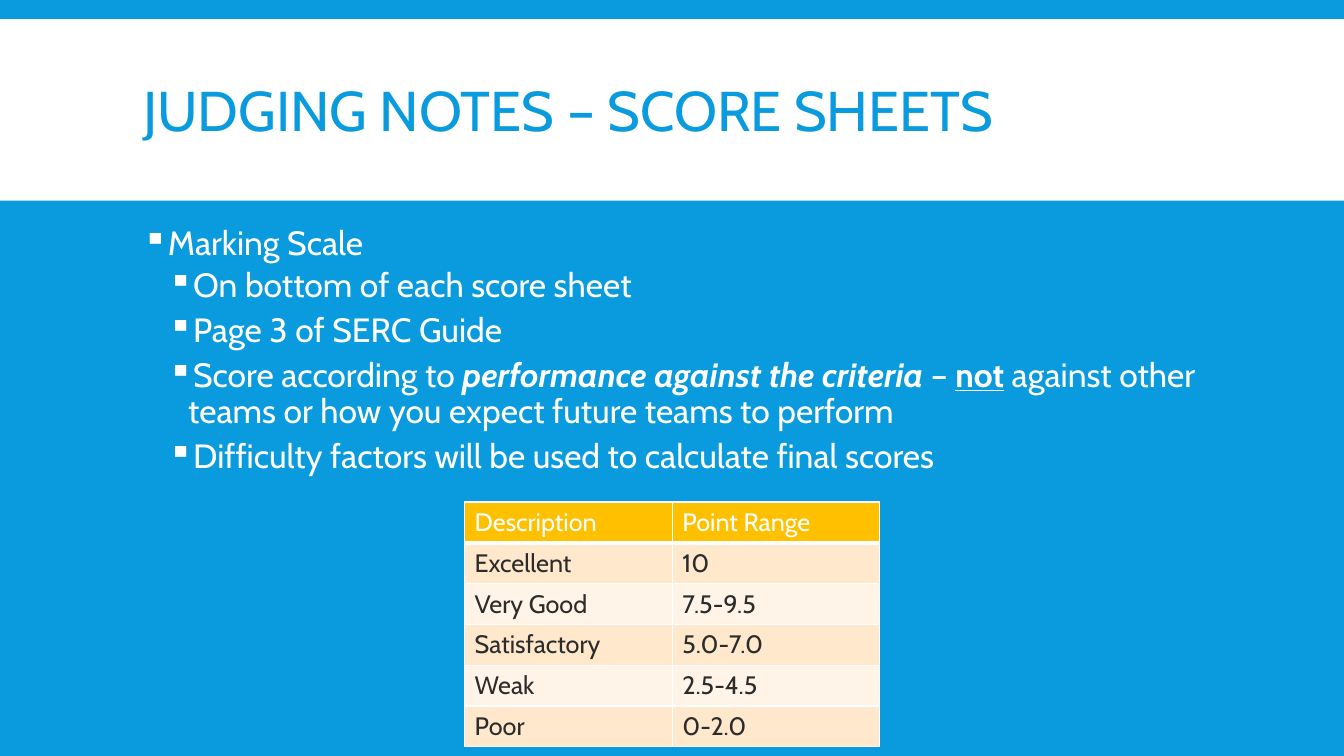
import pptx
import pptx.dml.color
import pptx.enum.shapes
import pptx.enum.text
import pptx.oxml
import pptx.oxml.ns
import pptx.util

Pt = pptx.util.Pt
RGBColor = pptx.dml.color.RGBColor

# Content
TITLE = "JUDGING NOTES – SCORE SHEETS"
BULLETS = [  # (level, [(text, font settings)])
    (0, [("Marking Scale", {})]),
    (1, [("On bottom of each score sheet", {})]),
    (1, [("Page 3 of SERC Guide", {})]),
    (1, [
        ("Score according to ", {}),
        ("performance against the criteria ", {"bold": True, "italic": True}),
        ("– ", {}),
        ("not", {"bold": True, "underline": True}),
        (" against other teams or how you expect future teams to perform", {}),
    ]),
    (1, [("Difficulty factors will be used to calculate final scores", {})]),
]
SCALE = [
    ("Description", "Point Range"),
    ("Excellent", "10"),
    ("Very Good", "7.5-9.5"),
    ("Satisfactory", "5.0-7.0"),
    ("Weak", "2.5-4.5"),
    ("Poor", "0-2.0"),
]

# Look
FONT = "Cabin"
BLUE = RGBColor(0x09, 0x9B, 0xDD)
WHITE = RGBColor(0xFF, 0xFF, 0xFF)
GOLD = RGBColor(0xFF, 0xC0, 0x00)
PEACH = RGBColor(0xFF, 0xE8, 0xCC)
CREAM = RGBColor(0xFF, 0xF4, 0xE7)
DARK = RGBColor(0x2C, 0x2C, 0x2C)
LEVELS = [  # left indent, then paragraph spacing
    (14.4, {"line_spacing": 0.9, "space_before": Pt(12), "space_after": Pt(2)}),
    (32.4, {"line_spacing": 0.9, "space_before": Pt(2), "space_after": Pt(4)}),
]
HANGING = 14.4

# Places, in points
WIDTH, HEIGHT = 960, 540
BAND = (0, 13.7, WIDTH, 129.6)
TITLE_BOX = (95, 22.3, 770.4, 118.8)
BODY_BOX = (95, 158.4, 770.4, 366.5)
TABLE_BOX = (331.9, 358.6, 296.6, 175)


def points(box):
    return [Pt(value) for value in box]


def apply(target, settings):
    for name, value in settings.items():
        setattr(target, name, value)


def add_span(para, text, size, color, **extra):
    span = para.add_run()
    span.text = text
    apply(span.font, {"name": FONT, "size": Pt(size), "bold": False, **extra})
    span.font.color.rgb = color


def add_bullet(para, left):
    properties = para._p.get_or_add_pPr()
    properties.set("marL", str(Pt(left)))
    properties.set("indent", str(-Pt(HANGING)))
    namespace = pptx.oxml.ns.nsdecls("a")
    for xml in (
        f'<a:buClr {namespace}><a:srgbClr val="{WHITE}"/></a:buClr>',
        f'<a:buChar {namespace} char="▪"/>',
    ):
        properties.append(pptx.oxml.parse_xml(xml))


def add_borders(cell, bottom):
    properties = cell._tc.get_or_add_tcPr()
    sides = [("lnL", 1), ("lnR", 1), ("lnT", 1), ("lnB", bottom)]
    for position, (side, width) in enumerate(sides):
        properties.insert(position, pptx.oxml.parse_xml(
            f'<a:{side} {pptx.oxml.ns.nsdecls("a")} w="{Pt(width)}"><a:solidFill>'
            f'<a:srgbClr val="{WHITE}"/></a:solidFill></a:{side}>'))


def main():
    deck = pptx.Presentation()
    deck.slide_width, deck.slide_height = Pt(WIDTH), Pt(HEIGHT)
    page = deck.slides.add_slide(deck.slide_layouts[5])
    page.background.fill.solid()
    page.background.fill.fore_color.rgb = BLUE

    # White band behind the title
    band = page.shapes.add_shape(
        pptx.enum.shapes.MSO_SHAPE.RECTANGLE, *points(BAND))
    band.shadow.inherit = False
    band.fill.solid()
    band.fill.fore_color.rgb = WHITE
    band.line.fill.background()
    title = page.shapes.title
    title.element.addprevious(band.element)

    # Title
    apply(title, dict(zip(("left", "top", "width", "height"), points(TITLE_BOX))))
    apply(title.text_frame, {
        "word_wrap": True,
        "auto_size": pptx.enum.text.MSO_AUTO_SIZE.NONE,
        "vertical_anchor": pptx.enum.text.MSO_ANCHOR.MIDDLE,
    })
    para = title.text_frame.paragraphs[0]
    apply(para, {"alignment": pptx.enum.text.PP_ALIGN.LEFT, "line_spacing": 0.85})
    add_span(para, TITLE, 40, BLUE)

    # Bullets
    frame = page.shapes.add_textbox(*points(BODY_BOX)).text_frame
    frame.word_wrap = True
    for index, (level, spans) in enumerate(BULLETS):
        para = frame.add_paragraph() if index else frame.paragraphs[0]
        left, spacing = LEVELS[level]
        apply(para, {"level": level, **spacing})
        add_bullet(para, left)
        for text, extra in spans:
            add_span(para, text, 24, WHITE, **extra)

    # Marking scale table
    table = page.shapes.add_table(
        len(SCALE), len(SCALE[0]), *points(TABLE_BOX)).table
    for row, values in enumerate(SCALE):
        header = row == 0
        fill = GOLD if header else (PEACH if row % 2 else CREAM)
        for column, text in enumerate(values):
            cell = table.cell(row, column)
            cell.fill.solid()
            cell.fill.fore_color.rgb = fill
            add_borders(cell, 3 if header else 1)
            add_span(cell.text_frame.paragraphs[0], text, 18,
                     WHITE if header else DARK)

    deck.save("out.pptx")


if __name__ == "__main__":
    main()
